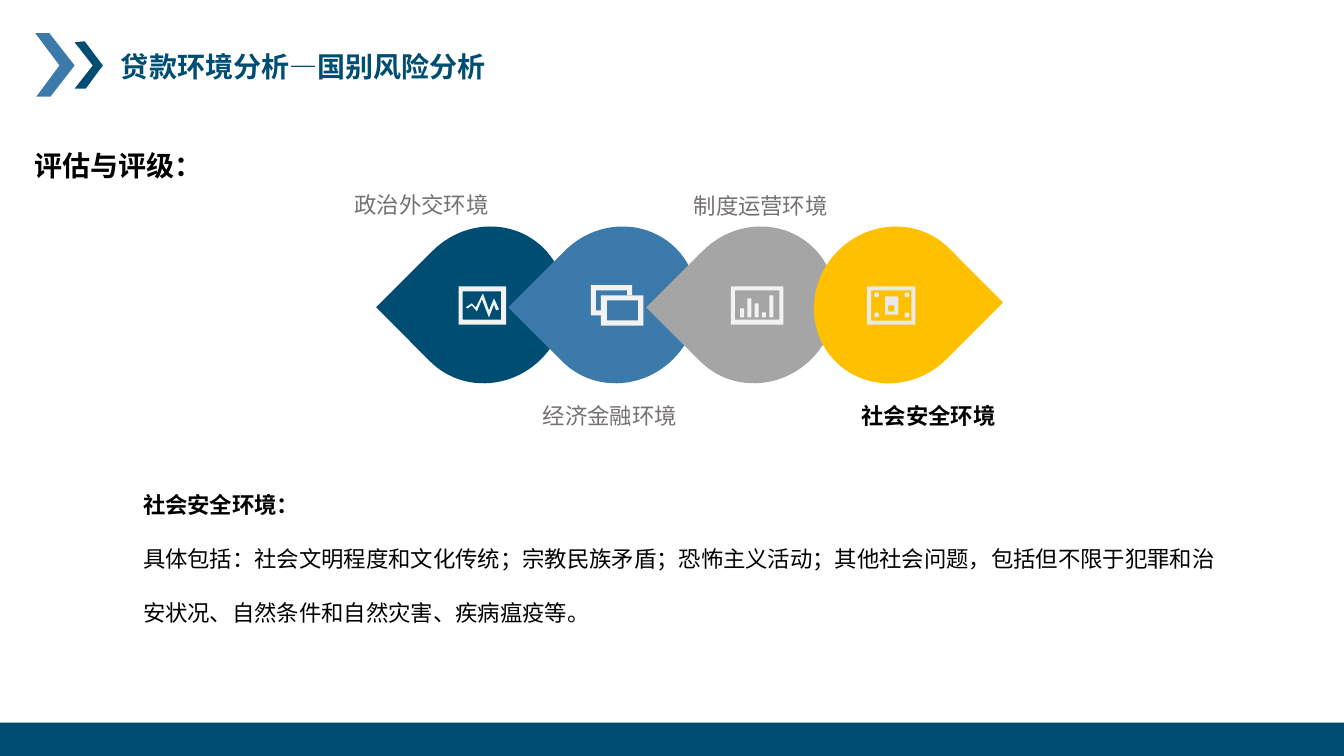
from pptx import Presentation
from pptx.dml.color import RGBColor
from pptx.enum import shapes, text
from pptx.oxml.ns import qn
from pptx.util import Inches, Pt

# Content
FONT = "Noto Sans CJK SC"
COLORS = {"navy": "004D73", "blue": "3C7AAB", "grey": "A5A5A5", "gold": "FFC000",
          "icon": "F2F2F2", "pale": "E9E9E9", "label": "767171", "black": "000000"}
TITLE = "贷款环境分析—国别风险分析"
HEADING = "评估与评级："
BODY = [
    ("社会安全环境：", True),
    ("具体包括：社会文明程度和文化传统；宗教民族矛盾；恐怖主义活动；其他社会问题，"
     "包括但不限于犯罪和治安状况、自然条件和自然灾害、疾病瘟疫等。", False),
]
# left, rotation, colour
DROPS = [(4.07, 225, "navy"), (5.38, 225, "blue"), (6.75, 225, "grey"), (8.09, 45, "gold")]
# text, box, colour, bold
LABELS = [
    ("政治外交环境", (3.39, 1.85, 1.58, 0.37), "label", False),
    ("经济金融环境", (5.17, 3.94, 1.76, 0.37), "label", False),
    ("制度运营环境", (6.49, 1.86, 2.11, 0.37), "label", False),
    ("社会安全环境", (8.33, 3.94, 1.76, 0.37), "black", True),
]
CHEVRONS = [
    ([(0.35, 0.33), (0.49, 0.33), (0.74, 0.65), (0.5, 0.96), (0.36, 0.96), (0.59, 0.65)], "blue"),
    ([(0.74, 0.42), (0.84, 0.41), (1.02, 0.65), (0.85, 0.88), (0.74, 0.88), (0.92, 0.65)], "navy"),
]
PULSE = [(4.64, 3.06), (4.68, 3.03), (4.73, 3.09), (4.78, 2.97), (4.85, 3.15), (4.9, 3.02),
         (4.92, 3.08), (4.95, 3.07), (4.9, 2.96), (4.85, 3.08), (4.79, 2.91), (4.72, 3.05),
         (4.68, 3.01), (4.62, 3.05)]
BACK_WINDOW = [(6.27, 2.93), (6.27, 2.83), (5.86, 2.83), (5.86, 3.13), (5.96, 3.13),
               (5.96, 3.08), (5.91, 3.08), (5.91, 2.88), (6.22, 2.88), (6.22, 2.93)]
# outer and inner edges as left, top, right, bottom
FRAMES = [
    ((4.55, 2.84, 5.02, 3.22), (4.59, 2.89, 4.97, 3.17), "icon"),
    ((5.96, 2.93, 6.38, 3.23), (6.02, 2.98, 6.33, 3.18), "icon"),
    ((7.25, 2.84, 7.77, 3.22), (7.29, 2.88, 7.73, 3.17), "icon"),
    ((8.6, 2.84, 9.08, 3.22), (8.64, 2.88, 9.04, 3.18), "pale"),
    ((8.78, 2.94, 8.91, 3.12), (8.81, 3.03, 8.87, 3.09), "pale"),
]
BAR_HEIGHTS = [0.09, 0.19, 0.14, 0.05, 0.22]

prs = Presentation()
prs.slide_width, prs.slide_height = Inches(13.33), Inches(7.5)
slide = prs.slides.add_slide(prs.slide_layouts[5])


def rgb(name):
    return RGBColor.from_string(COLORS[name])


def paint(sp, color):
    sp.shadow.inherit = False
    sp.fill.solid()
    sp.fill.fore_color.rgb = rgb(color)
    sp.line.fill.background()


def add_preset(kind, box, color, rotation=0):
    sp = slide.shapes.add_shape(kind, *map(Inches, box))
    sp.rotation = rotation
    paint(sp, color)


def add_outline(contours, color):
    contours = [[(Inches(x), Inches(y)) for x, y in points] for points in contours]
    builder = slide.shapes.build_freeform(*contours[0][0])
    builder.add_line_segments(contours[0][1:])
    for points in contours[1:]:
        builder.move_to(*points[0])
        builder.add_line_segments(points[1:])
    paint(builder.convert_to_shape(), color)


def corners(left, top, right, bottom):
    return [(left, top), (left, bottom), (right, bottom), (right, top)]


def write(sp, box, paragraphs, size, color, align=text.PP_ALIGN.LEFT, spacing=None):
    sp.left, sp.top, sp.width, sp.height = map(Inches, box)
    tf = sp.text_frame
    tf.word_wrap = True
    tf.auto_size = text.MSO_AUTO_SIZE.SHAPE_TO_FIT_TEXT
    tf.vertical_anchor = text.MSO_ANCHOR.TOP
    for i, (line, bold) in enumerate(paragraphs):
        p = tf.add_paragraph() if i else tf.paragraphs[0]
        p.alignment = align
        p.line_spacing = spacing
        r = p.add_run()
        r.text = line
        r.font.size, r.font.bold, r.font.name = Pt(size), bold, FONT
        r.font.color.rgb = rgb(color)
        # East Asian typeface
        ea = r.font._element.makeelement(qn("a:ea"), {"typeface": FONT})
        r.font._element.append(ea)


def add_text(box, *args, **kwargs):
    write(slide.shapes.add_textbox(0, 0, 0, 0), box, *args, **kwargs)


# Title, chevrons and footer band
write(slide.shapes.title, (1.1, 0.44, 4.94, 0.44), [(TITLE, True)], 20, "navy")
for points, color in CHEVRONS:
    add_outline([points], color)
add_preset(shapes.MSO_SHAPE.RECTANGLE, (0, 7.17, 13.33, 0.33), "navy")

# Teardrops
for left, rotation, color in DROPS:
    add_preset(shapes.MSO_SHAPE.TEAR, (left, 2.23, 1.52, 1.59), color, rotation)

# Icons
for outer, inner, color in FRAMES:
    add_outline([corners(*outer), corners(*inner)[::-1]], color)
for points in (PULSE, BACK_WINDOW):
    add_outline([points], "icon")
for i, height in enumerate(BAR_HEIGHTS):
    add_preset(shapes.MSO_SHAPE.RECTANGLE,
               (7.34 + i * 0.0725, 3.15 - height, 0.04, height), "icon")
for x in (8.67, 8.97):
    for y in (2.9, 3.1):
        add_preset(shapes.MSO_SHAPE.OVAL, (x, y, 0.05, 0.05), "pale")

# Heading, labels and body
add_text((0.24, 1.42, 1.82, 0.44), [(HEADING, True)], 20, "black")
for label, box, color, bold in LABELS:
    add_text(box, [(label, bold)], 16, color, align=text.PP_ALIGN.CENTER)
add_text((1.32, 4.56, 10.98, 1.64), BODY, 16, "black", spacing=2.0)

prs.save("out.pptx")
